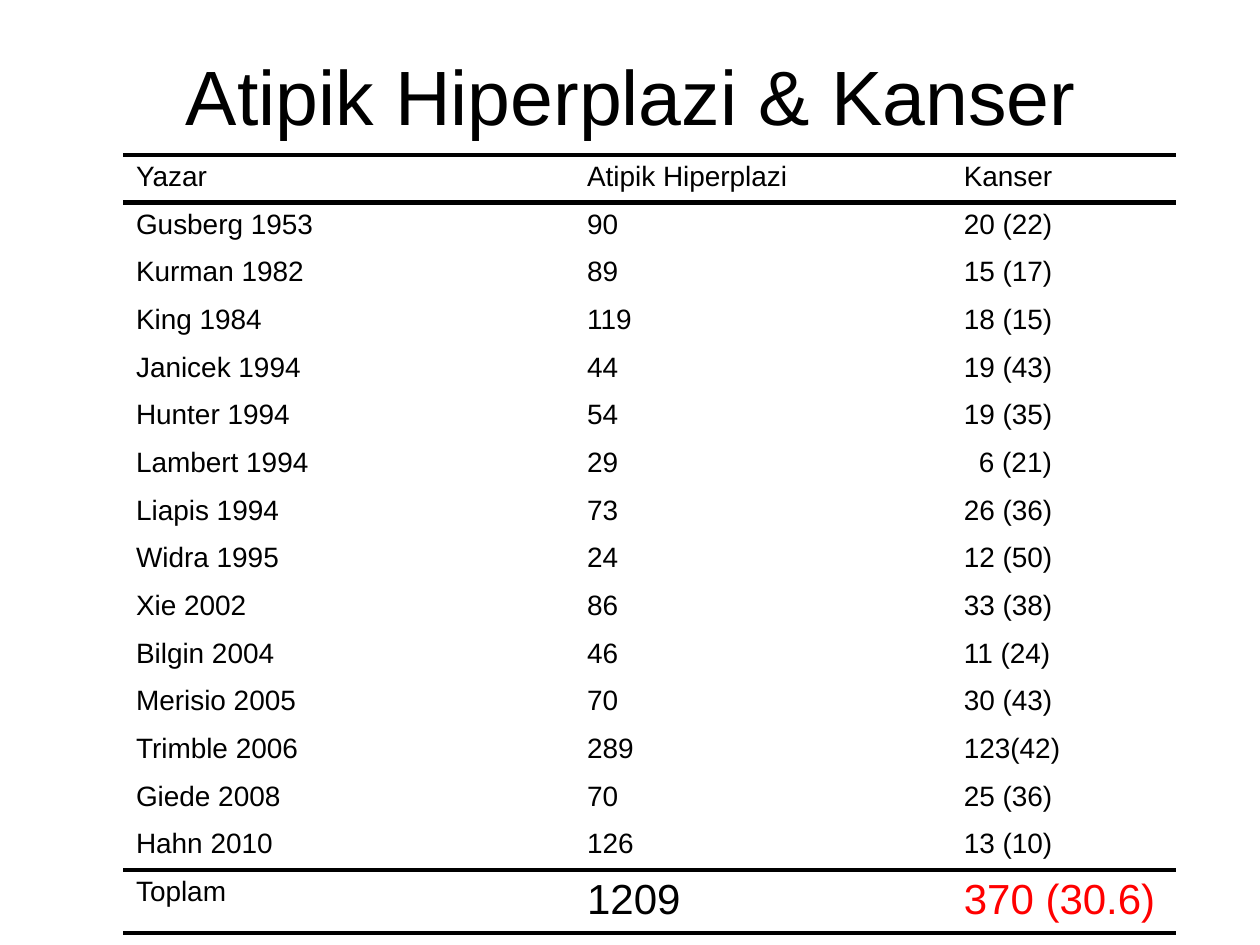
from lxml import etree
from pptx import Presentation
from pptx.dml.color import RGBColor
from pptx.enum.text import MSO_ANCHOR, PP_ALIGN
from pptx.oxml.ns import qn
from pptx.util import Inches, Pt

CENTER = PP_ALIGN.CENTER
MIDDLE = MSO_ANCHOR.MIDDLE
TOP = MSO_ANCHOR.TOP

FONT = "Arial"
BLACK = "000000"
RED = "FF0000"

TABLE_HEIGHT = 6.18
TOTAL_HEIGHT = 0.5
COLUMN_WIDTHS = (3.58, 2.99, 1.78)
DIGIT_INDENT = 0.12

ROWS = [
    ("Yazar", "Atipik Hiperplazi", "Kanser"),
    ("Gusberg 1953", "90", "20 (22)"),
    ("Kurman 1982", "89", "15 (17)"),
    ("King 1984", "119", "18 (15)"),
    ("Janicek 1994", "44", "19 (43)"),
    ("Hunter 1994", "54", "19 (35)"),
    ("Lambert 1994", "29", "6 (21)"),
    ("Liapis 1994", "73", "26 (36)"),
    ("Widra 1995", "24", "12 (50)"),
    ("Xie 2002", "86", "33 (38)"),
    ("Bilgin 2004", "46", "11 (24)"),
    ("Merisio 2005", "70", "30 (43)"),
    ("Trimble 2006", "289", "123(42)"),
    ("Giede 2008", "70", "25 (36)"),
    ("Hahn 2010", "126", "13 (10)"),
    ("Toplam", "1209", "370 (30.6)"),
]
LAST = len(ROWS) - 1
# Horizontal rules, each named by the row below it
RULES = {0, 1, LAST, LAST + 1}


def color(hex_value):
    return RGBColor.from_string(hex_value)


def add_run(para, text, size, hex_value=BLACK):
    span = para.add_run()
    span.text = text
    span.font.name = FONT
    span.font.size = Pt(size)
    span.font.bold = False
    span.font.color.rgb = color(hex_value)


def add_title(page, text):
    box = page.shapes.add_textbox(Inches(0.51), Inches(0.13), Inches(9), Inches(1.25))
    frame = box.text_frame
    frame.word_wrap = True
    frame.vertical_anchor = MIDDLE
    para = frame.paragraphs[0]
    para.alignment = CENTER
    add_run(para, text, 44)


def set_borders(cell, sides):
    """Draw a 3 pt black line on each listed side and none on the others."""
    properties = cell._tc.get_or_add_tcPr()
    for index, side in enumerate(("lnL", "lnR", "lnT", "lnB")):
        line = etree.Element(qn(f"a:{side}"), w=str(Pt(3)))
        if side in sides:
            fill = etree.SubElement(line, qn("a:solidFill"))
            etree.SubElement(fill, qn("a:srgbClr"), val=BLACK)
        else:
            etree.SubElement(line, qn("a:noFill"))
        properties.insert(index, line)


def fill_cell(cell, text, row, column):
    is_sum = row == LAST and column > 0
    hex_value = RED if is_sum and column == 2 else BLACK
    add_run(cell.text_frame.paragraphs[0], text, 24 if is_sum else 16, hex_value)
    cell.vertical_anchor = TOP
    cell.fill.background()
    # Single-digit counts line up with the units of the two-digit ones
    if column == 2 and text[1] == " ":
        cell.margin_left = Inches(0.1 + DIGIT_INDENT)
    sides = {side for side, rule in (("lnT", row), ("lnB", row + 1)) if rule in RULES}
    set_borders(cell, sides)


def add_study_table(page):
    frame = page.shapes.add_table(
        len(ROWS), len(COLUMN_WIDTHS), Inches(0.98), Inches(1.23),
        Inches(sum(COLUMN_WIDTHS)), Inches(TABLE_HEIGHT))
    table = frame.table
    table.first_row = False
    table.horz_banding = False
    for column, width in zip(table.columns, COLUMN_WIDTHS):
        column.width = Inches(width)
    for row, texts in enumerate(ROWS):
        height = TOTAL_HEIGHT if row == LAST else (TABLE_HEIGHT - TOTAL_HEIGHT) / LAST
        table.rows[row].height = Inches(height)
        for column, text in enumerate(texts):
            fill_cell(table.cell(row, column), text, row, column)


def main():
    deck = Presentation()
    deck.slide_width = Inches(10)
    deck.slide_height = Inches(7.5)
    page = deck.slides.add_slide(deck.slide_layouts[6])
    add_title(page, "Atipik Hiperplazi & Kanser")
    add_study_table(page)
    deck.save("out.pptx")


if __name__ == "__main__":
    main()
